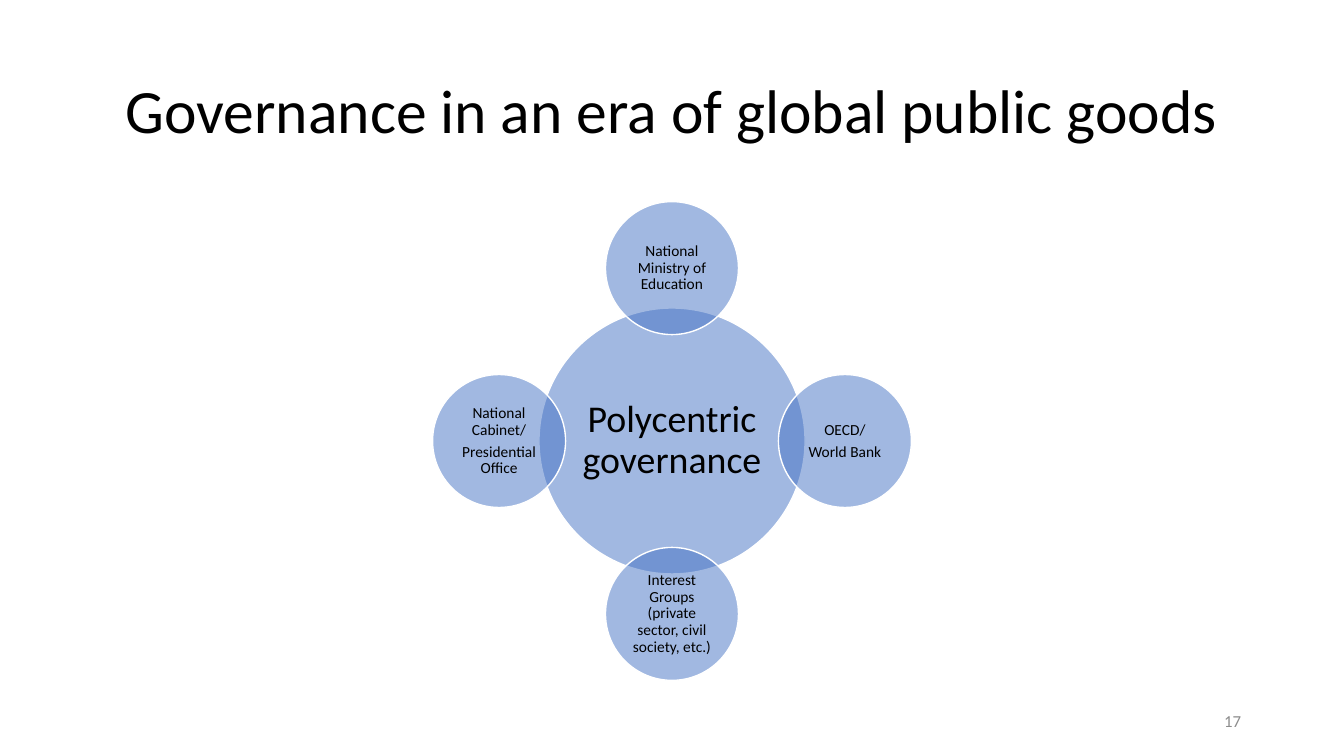
from dataclasses import dataclass
from math import cos, pi, sin

from lxml.etree import SubElement
from pptx import Presentation
from pptx.dml.color import RGBColor as Rgb
from pptx.enum.shapes import MSO_SHAPE as Shape
from pptx.enum.text import MSO_ANCHOR as Anchor, MSO_AUTO_SIZE as Fit, PP_ALIGN as Align
from pptx.oxml.ns import qn
from pptx.util import Inches, Pt

WIDE, HIGH = 13.33, 7.5


@dataclass(frozen=True)
class Theme:
    font: str = "Calibri"
    ink: Rgb = Rgb(0, 0, 0)
    grey: Rgb = Rgb(0x8C, 0x8C, 0x8C)
    blue: Rgb = Rgb(0x44, 0x72, 0xC4)
    white: Rgb = Rgb(255, 255, 255)
    alpha: int = 50
    title: int = 44
    hub: int = 27
    node: int = 11
    page: int = 12


LOOK = Theme()
HUB = ["Polycentric governance"]
# Clockwise from the top
NODES = [
    ["National Ministry of Education"],
    ["OECD/", "World Bank"],
    ["Interest Groups (private sector, civil society, etc.)"],
    ["National Cabinet/", "Presidential Office"],
]


def apply(item, form):
    for name, value in form.items():
        setattr(item, name, value)


def write(shape, lines, size, ink=LOOK.ink, inset=None, **form):
    frame = shape.text_frame
    apply(frame, {"word_wrap": True, "auto_size": Fit.NONE,
                  "vertical_anchor": Anchor.MIDDLE})
    if inset is not None:
        sides = ("left", "top", "right", "bottom")
        apply(frame, {f"margin_{side}": Inches(inset) for side in sides})
    for i, line in enumerate(lines):
        para = frame.add_paragraph() if i else frame.paragraphs[0]
        apply(para, {"alignment": Align.CENTER, **form})
        run = para.add_run()
        run.text = line
        apply(run.font, {"name": LOOK.font, "size": Pt(size)})
        run.font.color.rgb = ink


def head(slide, left, top, width, height):
    title = slide.shapes.title
    apply(title, {"left": Inches(left), "top": Inches(top),
                  "width": Inches(width), "height": Inches(height)})
    write(title, ["Governance in an era of global public goods"],
          LOOK.title, line_spacing=0.9)


def disc(group, x, y, size, lines, type_size, inset):
    shape = group.shapes.add_shape(Shape.OVAL, Inches(x - size / 2),
                                   Inches(y - size / 2), Inches(size), Inches(size))
    shape.shadow.inherit = False
    shape.fill.solid()
    shape.fill.fore_color.rgb = LOOK.blue
    tint = shape.fill._xPr.find(".//" + qn("a:srgbClr"))
    SubElement(tint, qn("a:alpha")).set("val", str(LOOK.alpha * 1000))
    shape.line.color.rgb = LOOK.white
    shape.line.width = Pt(1)
    write(shape, lines, type_size, inset=inset, line_spacing=0.9,
          space_after=Pt(0.35 * type_size))


def radial(slide, left, top, side):
    """Hub with satellites half its size, spread evenly around it."""
    group = slide.shapes.add_group_shape()
    x, y = left + side / 2, top + side / 2
    hub = side / 1.8
    reach = 0.65 * hub
    disc(group, x, y, hub, HUB, LOOK.hub, 0.04)
    for i, lines in enumerate(NODES):
        turn = 2 * pi * i / len(NODES)
        disc(group, x + reach * sin(turn), y - reach * cos(turn),
             hub / 2, lines, LOOK.node, 0.02)


def foot(slide, left, top, width, height):
    box = slide.shapes.add_textbox(Inches(left), Inches(top),
                                   Inches(width), Inches(height))
    write(box, ["17"], LOOK.page, LOOK.grey, alignment=Align.RIGHT)


def main():
    deck = Presentation()
    apply(deck, {"slide_width": Inches(WIDE), "slide_height": Inches(HIGH)})
    slide = deck.slides.add_slide(deck.slide_layouts[5])
    edge = 0.92
    # Title
    head(slide, edge, 0.4, WIDE - 2 * edge, 1.45)
    # Diagram, centred across the slide
    side = 4.75
    radial(slide, (WIDE - side) / 2, 2, side)
    # Page number
    foot(slide, WIDE - edge - 3, 6.95, 3, 0.4)
    deck.save("out.pptx")


if __name__ == "__main__":
    main()
